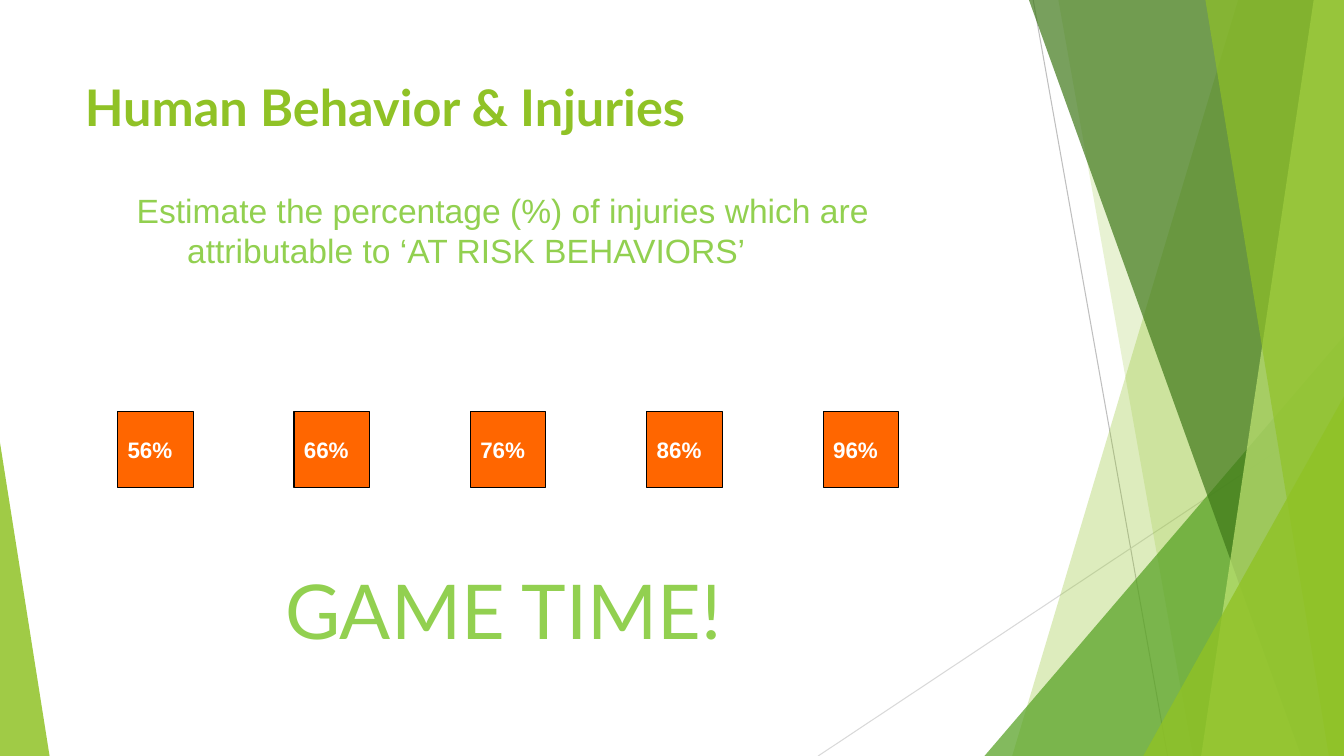
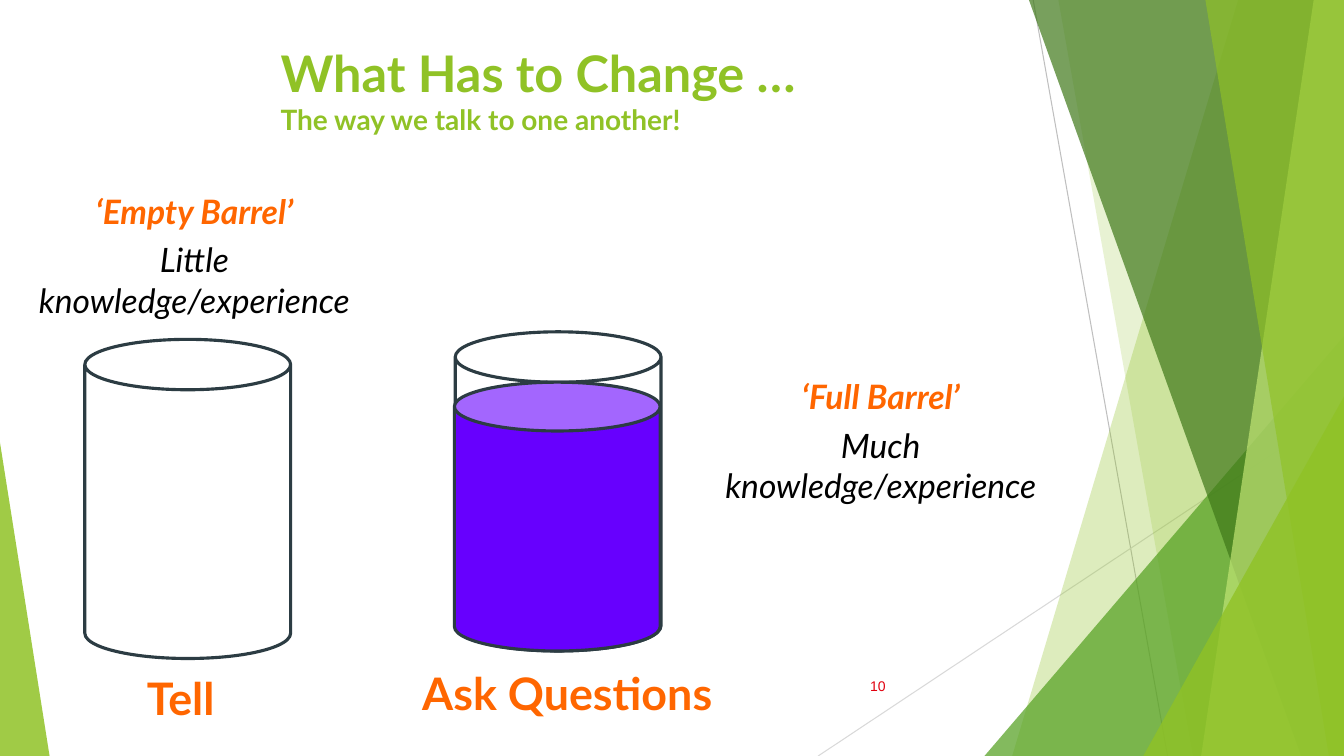
"""Build two safety-training slides on a grid of 160 columns by 90 rows."""
from dataclasses import dataclass

from lxml import etree
from pptx import Presentation
from pptx.dml.color import RGBColor
from pptx.enum.shapes import MSO_CONNECTOR, MSO_SHAPE
from pptx.enum.text import MSO_ANCHOR, PP_ALIGN
from pptx.oxml.ns import qn
from pptx.util import Inches, Pt

LINE = MSO_CONNECTOR.STRAIGHT
WEDGE = MSO_SHAPE.RIGHT_TRIANGLE
PEAK = MSO_SHAPE.ISOSCELES_TRIANGLE
BUTTON = MSO_SHAPE.ACTION_BUTTON_CUSTOM
CAN = MSO_SHAPE.CAN
LEFT, MID, RIGHT = PP_ALIGN.LEFT, PP_ALIGN.CENTER, PP_ALIGN.RIGHT
TOP, CENTER = MSO_ANCHOR.TOP, MSO_ANCHOR.MIDDLE

COLS, ROWS = 160, 90
GREEN, LIME, LEAF = "90C226", "92D050", "54A021"
MOSS, PALE = "3F7819", "C0E474"
ORANGE, PURPLE, SLATE = "FF6600", "6700FE", "2C3C43"
BLACK, WHITE, RED = "000000", "FFFFFF", "E1000F"
SANS, HEAD = "Arial", "Lato"


@dataclass(frozen=True)
class Box:
    """A place on the grid."""
    col: float
    row: float
    wide: float
    high: float

    def emu(self) -> tuple:
        """Return left, top, width and height as lengths."""
        return tuple(cell(n) for n in (self.col, self.row, self.wide, self.high))


@dataclass(frozen=True)
class Facet:
    """A band from a slanted edge to the right side of the slide."""
    top: float
    base: float
    color: str
    alpha: int


@dataclass(frozen=True)
class Peak:
    """A triangle with its tip at a share of its width."""
    box: Box
    tip: float
    color: str
    alpha: int


@dataclass(frozen=True)
class Ray:
    """A thin line between two grid points."""
    start: tuple
    end: tuple
    color: str


@dataclass(frozen=True)
class Run:
    """Text with one look."""
    text: str
    size: float
    color: str
    font: str = HEAD
    bold: bool = False
    slant: bool = False


@dataclass(frozen=True)
class Can:
    """A barrel or the liquid in it."""
    box: Box
    lid: float
    fill: str = ""


RAYS = (
    Ray((123, 0), (139, ROWS), "BFBFBF"),
    Ray((COLS, 48.4), (97.4, ROWS), "D9D9D9"),
)
DECOR = (
    Facet(147.4, 120.5, GREEN, 30),
    Facet(126, 142, GREEN, 20),
    Peak(Box(117.2, 40, 42.8, 50), 1, LEAF, 72),
    Facet(122.5, 154.9, MOSS, 70),
    Facet(156.4, 143, PALE, 70),
    Facet(143.5, 158.2, GREEN, 65),
    Peak(Box(136.1, 47.2, 23.9, 42.8), 1, GREEN, 80),
    Peak(Box(0, 52.7, 5.9, 37.3), 0, GREEN, 85),
)
CANS = (
    Can(Box(10.1, 40.4, 24.5, 38), 0.245),
    Can(Box(54.2, 39.5, 24.5, 38), 0.245),
    Can(Box(54.1, 45.5, 24.5, 32), 0.237, PURPLE),
)
NOTES = (
    (Box(0, 22.1, 46.3, 16.8), "‘Empty Barrel’", "Little knowledge/experience"),
    (Box(81.4, 44.2, 46.9, 16.8), "‘Full Barrel’", "Much knowledge/experience"),
)
MODES = (
    (Box(16.3, 79.3, 12, 7.7), "Tell", LEFT),
    (Box(46.3, 78.7, 42.5, 7.7), "Ask Questions", MID),
)


def cell(count: float) -> int:
    """Turn grid cells into a length."""
    return Inches(count / 12)


def tint(code: str) -> RGBColor:
    """Turn a hex string into a colour."""
    return RGBColor.from_string(code)


def paint(shape, fill: str = "", edge: str = "", width: float = 0.75,
          alpha: int = 100) -> None:
    """Set the fill and outline of a shape."""
    shape.shadow.inherit = False
    if fill:
        shape.fill.solid()
        shape.fill.fore_color.rgb = tint(fill)
    else:
        shape.fill.background()
    if alpha < 100:
        node = shape.element.spPr.find(".//" + qn("a:srgbClr"))
        etree.SubElement(node, qn("a:alpha"), val=str(alpha * 1000))
    if edge:
        shape.line.color.rgb = tint(edge)
        shape.line.width = Pt(width)
    else:
        shape.line.fill.background()


def write(para, runs: tuple, align=LEFT) -> None:
    """Add runs to a paragraph."""
    para.alignment = align
    for item in runs:
        run = para.add_run()
        run.text = item.text
        font = run.font
        font.size, font.name = Pt(item.size), item.font
        font.bold, font.italic = item.bold, item.slant
        font.color.rgb = tint(item.color)


def label(slide, box: Box, lines: tuple, align=LEFT, anchor=TOP, gap: float = 0):
    """Add a text box with one paragraph a line."""
    frame = slide.shapes.add_textbox(*box.emu()).text_frame
    frame.word_wrap = True
    frame.vertical_anchor = anchor
    for idx, run in enumerate(lines):
        para = frame.add_paragraph() if idx else frame.paragraphs[0]
        para.space_before = Pt(gap)
        write(para, (run,), align)
    return frame


def head(slide, box: Box, runs: tuple) -> None:
    """Place the title and fill it, one run a line."""
    title = slide.shapes.title
    title.left, title.top, title.width, title.height = box.emu()
    frame = title.text_frame
    frame.vertical_anchor = TOP
    para = frame.paragraphs[0]
    for idx, run in enumerate(runs):
        if idx:
            para.add_line_break()
        write(para, (run,))


def facet(slide, item: Facet):
    """Draw the outline of a band."""
    pen = slide.shapes.build_freeform(cell(item.top), 0)
    points = ((COLS, 0), (COLS, ROWS), (item.base, ROWS))
    pen.add_line_segments([(cell(x), cell(y)) for x, y in points], close=True)
    return pen.convert_to_shape()


def peak(slide, item: Peak):
    """Draw a triangle."""
    shape = slide.shapes.add_shape(PEAK, *item.box.emu())
    shape.adjustments[0] = item.tip
    return shape


def decor(slide, layout) -> None:
    """Draw the shared backdrop and hand it to the layout."""
    shapes = []
    for ray in RAYS:
        ends = [cell(n) for n in ray.start + ray.end]
        line = slide.shapes.add_connector(LINE, *ends)
        line.line.color.rgb = tint(ray.color)
        line.line.width = Pt(0.75)
        etree.SubElement(line.element.spPr, qn("a:effectLst"))
        shapes.append(line)
    for item in DECOR:
        draw = facet if isinstance(item, Facet) else peak
        shape = draw(slide, item)
        paint(shape, item.color, alpha=item.alpha)
        shapes.append(shape)
    for spot in list(layout.placeholders)[1:]:
        spot.element.getparent().remove(spot.element)
    for shape in shapes:
        layout.shapes.element.append(shape.element)


def game(slide) -> None:
    """Fill the slide with the guessing game."""
    head(slide, Box(8.9, 8.4, 112.8, 17.3),
         (Run("Human Behavior & Injuries", 36, GREEN, bold=True),))
    ask = Run("Estimate the percentage (%) of injuries which are "
              "attributable to ‘AT RISK BEHAVIORS’", 24, LIME, SANS)
    frame = label(slide, Box(15.1, 22, 92.2, 18.1), (ask,))
    props = frame.paragraphs[0]._p.get_or_add_pPr()
    props.set("marL", str(cell(6)))
    props.set("indent", str(-cell(6)))
    for idx in range(5):
        place = Box(14 + 21 * idx, 49, 9, 9)
        shape = slide.shapes.add_shape(BUTTON, *place.emu())
        paint(shape, ORANGE, BLACK)
        frame = shape.text_frame
        frame.word_wrap = False
        frame.vertical_anchor = CENTER
        text = f"{56 + 10 * idx}%"
        write(frame.paragraphs[0], (Run(text, 16, WHITE, SANS, True),))
    label(slide, Box(27.2, 66.5, 65.5, 12.1), (Run("GAME TIME!", 54, LIME),), MID)


def talk(slide) -> None:
    """Fill the slide with the two barrels."""
    head(slide, Box(32.2, 4.4, 124.9, 17.3),
         (Run("What Has to Change … ", 36, GREEN, bold=True),
          Run("The way we talk to one another!", 20, GREEN, bold=True)))
    for can in CANS:
        shape = slide.shapes.add_shape(CAN, *can.box.emu())
        shape.adjustments[0] = can.lid
        paint(shape, can.fill, SLATE, 2.25)
    for box, name, text in NOTES:
        lines = (Run(name, 24, ORANGE, bold=True, slant=True),
                 Run(text, 24, BLACK, slant=True))
        label(slide, box, lines, MID, gap=6)
    for box, text, align in MODES:
        label(slide, box, (Run(text, 32, ORANGE, bold=True),), align)
    label(slide, Box(94.6, 79.3, 12, 4.8), (Run("10", 10, RED, SANS),), RIGHT, CENTER)


def main() -> None:
    """Build and save the deck."""
    deck = Presentation()
    deck.slide_width, deck.slide_height = cell(COLS), cell(ROWS)
    layout = deck.slide_layouts[5]
    first, second = (deck.slides.add_slide(layout) for _ in range(2))
    decor(first, layout)
    game(first)
    talk(second)
    deck.save("out.pptx")


if __name__ == "__main__":
    main()
